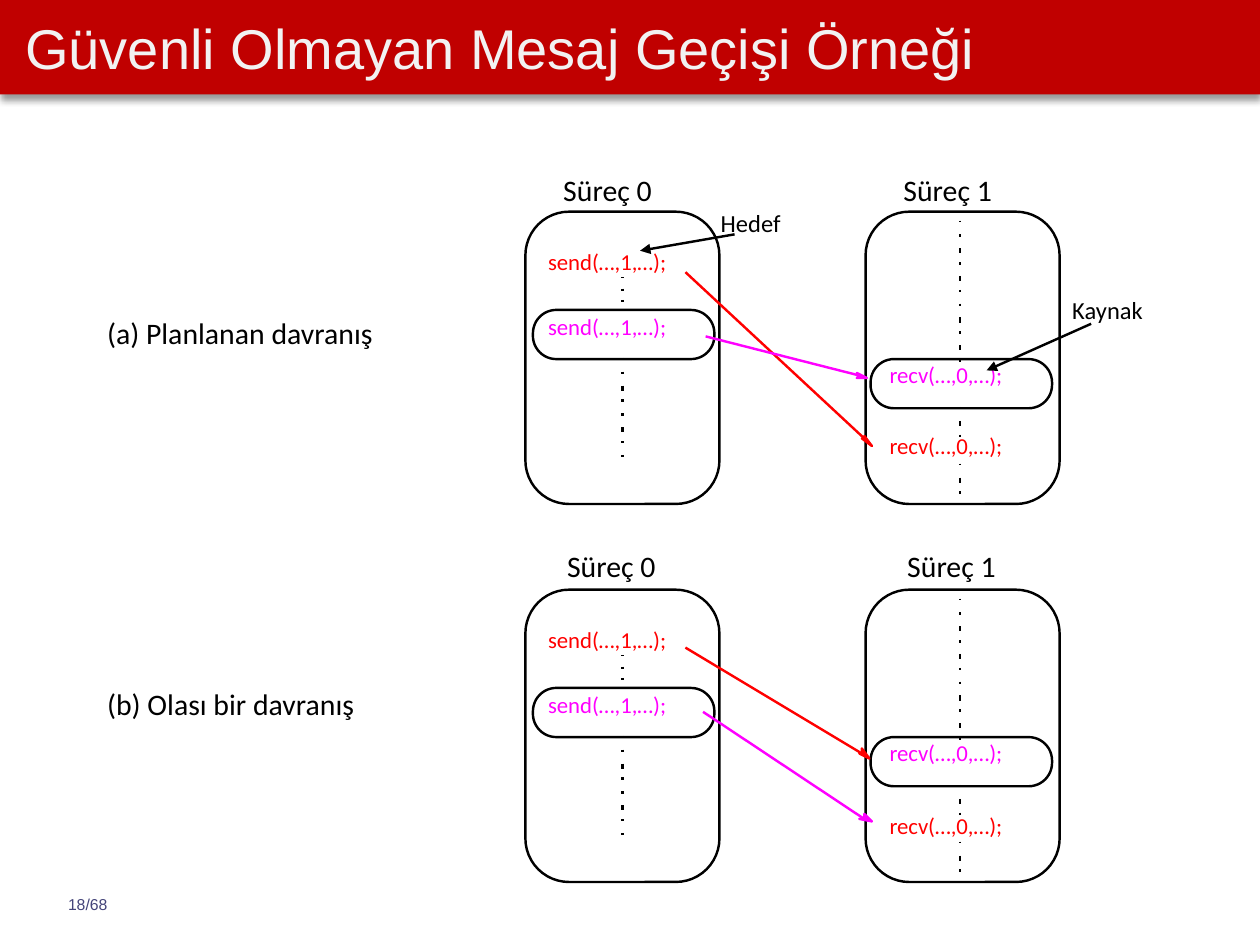
from lxml import etree
from pptx import Presentation
from pptx.dml.color import RGBColor
from pptx.enum import shapes, text
from pptx.oxml.ns import qn
from pptx.util import Inches, Pt

RED = RGBColor(0xFF, 0x00, 0x00)
MAGENTA = RGBColor(0xFF, 0x00, 0xFF)
BLACK = RGBColor(0x00, 0x00, 0x00)
BANNER = RGBColor(0xC0, 0x00, 0x00)
TITLE_TEXT = RGBColor(0xF2, 0xF2, 0xF2)
PAGE_TEXT = RGBColor(0x44, 0x44, 0x79)

LINE_WIDTH = Pt(1.38)
PROCESS_GAP = 2.7  # from the left of one process to the left of the next
NO_INSETS = dict(margin_left=0, margin_top=0, margin_right=0, margin_bottom=0)

# dx, top, step, number of marks, which marks are long
DOT_RUNS = (
    (0.77, 0.52, 0.09, 3, ()),
    (0.77, 1.16, 0.11, 8, (2, 5)),
    (3.45, 0.07, 0.11, 11, (2, 4, 7, 9)),
    (3.45, 1.55, 0.11, 3, (1,)),
    (3.45, 2.0, 0.11, 3, (1,)),
)


def set_attrs(obj, values):
    for name, value in values.items():
        setattr(obj, name, value)


def write(tf, words, size, color, font="Calibri", **frame):
    set_attrs(tf, {**NO_INSETS, "word_wrap": True, **frame})
    p = tf.paragraphs[0]
    p.alignment = text.PP_ALIGN.LEFT
    r = p.add_run()
    r.text = words
    set_attrs(r.font, dict(name=font, size=Pt(size)))
    r.font.color.rgb = color


def add_label(parent, x, y, w, h, words, size, color=BLACK, **style):
    box = parent.add_textbox(Inches(x), Inches(y), Inches(w), Inches(h))
    write(box.text_frame, words, size, color, **style)


def set_line(sp, color):
    sp.line.color.rgb = color
    sp.line.width = LINE_WIDTH


def add_outline(parent, x, y, w, h, rounding):
    sp = parent.add_shape(shapes.MSO_SHAPE.ROUNDED_RECTANGLE,
                          Inches(x), Inches(y), Inches(w), Inches(h))
    sp.adjustments[0] = rounding
    sp.shadow.inherit = False
    sp.fill.background()
    set_line(sp, BLACK)


def add_line(parent, start, end, color=BLACK):
    line = parent.add_connector(shapes.MSO_CONNECTOR.STRAIGHT,
                                *(Inches(v) for v in (*start, *end)))
    set_line(line, color)
    etree.SubElement(line._element.spPr, qn("a:effectLst"))
    return line


def add_pointer(parent, start, end):
    """Black line that ends in a triangle."""
    ln = add_line(parent, start, end).line._get_or_add_ln()
    etree.SubElement(ln, qn("a:tailEnd"), type="triangle")


def add_message(parent, start, head, color):
    """Line to the neck of a narrow arrowhead; head lists neck first."""
    add_line(parent, start, head[0], color)
    points = [(Inches(px), Inches(py)) for px, py in head]
    builder = parent.build_freeform(*points[0], scale=1.0)
    builder.add_line_segments(points[1:], close=True)
    sp = builder.convert_to_shape()
    sp.shadow.inherit = False
    sp.fill.solid()
    sp.fill.fore_color.rgb = color
    set_line(sp, color)


def add_dots(parent, x, top, step, count, long_marks):
    """Vertical run of dots and short dashes."""
    for i in range(count):
        start = top + i * step
        length = 0.04 if i in long_marks else 0.02 if i else 0.01
        add_line(parent, (x, start), (x, start + length))


def add_title(slide, x, y, w, h):
    title = slide.shapes.title
    set_attrs(title, dict(left=Inches(x), top=Inches(y),
                          width=Inches(w), height=Inches(h)))
    title.fill.solid()
    title.fill.fore_color.rgb = BANNER
    effects = etree.SubElement(title._element.spPr, qn("a:effectLst"))
    shadow = etree.SubElement(effects, qn("a:outerShdw"), blurRad=str(Pt(4)),
                              dist=str(Pt(3)), dir="5400000", rotWithShape="0")
    shade = etree.SubElement(shadow, qn("a:srgbClr"), val="000000")
    etree.SubElement(shade, qn("a:alpha"), val="40000")
    write(title.text_frame, "Güvenli Olmayan Mesaj Geçişi Örneği", 32,
          TITLE_TEXT, font="Arial", margin_left=Inches(0.2),
          vertical_anchor=text.MSO_ANCHOR.MIDDLE,
          auto_size=text.MSO_AUTO_SIZE.NONE)


def add_exchange(slide, x, y, name_at, last_recv, messages, notes=()):
    """Two processes and their messages; all places are relative to x, y."""
    group = slide.shapes.add_group_shape().shapes

    def at(point):
        return x + point[0], y + point[1]

    for i in range(2):
        left = x + i * PROCESS_GAP
        add_outline(group, left, y, 1.54, 2.32, 0.225)
        add_label(group, left + name_at[0], y + name_at[1], 0.82, 0.29,
                  f"Süreç {i}", 17)

    for place in ((0.06, 0.78), (2.74, 1.17)):
        add_outline(group, *at(place), 1.44, 0.39, 0.476)

    send, recv = "send(…,1,…);", "recv(…,0,…);"
    calls = ((send, (0.18, 0.29), 1.13, RED),
             (send, (0.18, 0.8), 1.13, MAGENTA),
             (recv, (2.89, 1.18), 1.08, MAGENTA),
             (recv, (2.89, last_recv), 1.08, RED))
    for call, place, width, color in calls:
        add_label(group, *at(place), width, 0.22, call, 13, color)

    for dx, top, *marks in DOT_RUNS:
        add_dots(group, *at((dx, top)), *marks)

    for start, head, color in messages:
        add_message(group, at(start), [at(point) for point in head], color)

    for words, place, width, start, end in notes:
        add_label(group, *at(place), width, 0.24, words, 14)
        add_pointer(group, at(start), at(end))


def main():
    prs = Presentation()
    prs.slide_width, prs.slide_height = Inches(10), Inches(7.5)
    slide = prs.slides.add_slide(prs.slide_layouts[5])

    add_title(slide, 0, 0, 10, 0.75)
    add_label(slide.shapes, 0.54, 7.1, 0.63, 0.15, "18/68", 9, PAGE_TEXT,
              font="Arial")
    add_label(slide.shapes, 0.85, 2.5, 2.4, 0.29, "(a) Planlanan davranış", 17)
    add_label(slide.shapes, 0.85, 5.44, 2.23, 0.29, "(b) Olası bir davranış", 17)

    add_exchange(
        slide, 4.17, 1.68, name_at=(0.3, -0.32), last_recv=1.75,
        messages=(
            ((1.27, 0.48),
             ((2.69, 1.8), (2.69, 1.78), (2.75, 1.86), (2.67, 1.8)), RED),
            ((1.43, 0.99),
             ((2.65, 1.3), (2.63, 1.28), (2.71, 1.32), (2.63, 1.32)), MAGENTA)),
        notes=(
            ("Hedef", (1.55, -0.03), 0.52, (1.66, 0.18), (0.91, 0.31)),
            ("Kaynak", (4.34, 0.66), 0.65, (4.49, 0.89), (3.66, 1.26))))
    add_exchange(
        slide, 4.17, 4.68, name_at=(0.33, -0.33), last_recv=1.76,
        messages=(
            ((1.27, 0.46),
             ((2.67, 1.3), (2.67, 1.26), (2.73, 1.34), (2.65, 1.3)), RED),
            ((1.41, 0.97),
             ((2.69, 1.82), (2.69, 1.78), (2.75, 1.84), (2.65, 1.82)), MAGENTA)))

    prs.save("out.pptx")


if __name__ == "__main__":
    main()
